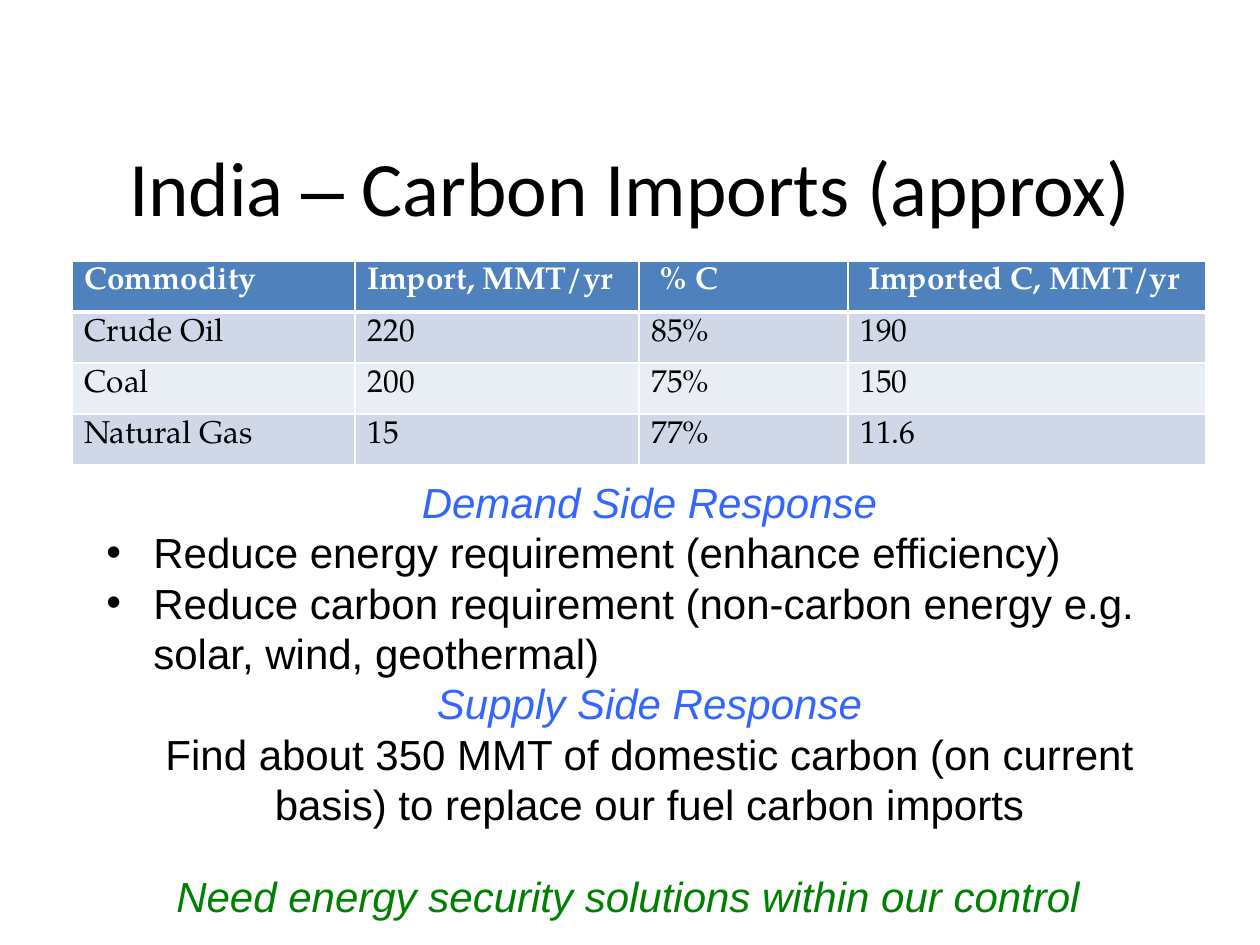
from lxml import etree
from pptx import Presentation
from pptx.dml.color import RGBColor
from pptx.enum.text import MSO_ANCHOR, PP_ALIGN
from pptx.oxml.ns import qn
from pptx.util import Emu, Pt

CENTER, LEFT = PP_ALIGN.CENTER, PP_ALIGN.LEFT
TOP, MIDDLE = MSO_ANCHOR.TOP, MSO_ANCHOR.MIDDLE

BLACK = RGBColor(0x00, 0x00, 0x00)
WHITE = RGBColor(0xFF, 0xFF, 0xFF)
BLUE = RGBColor(0x33, 0x66, 0xFF)
GREEN = RGBColor(0x00, 0x80, 0x00)
HEADER_FILL = RGBColor(0x4F, 0x81, 0xBD)
BAND_FILLS = [RGBColor(0xE9, 0xED, 0xF4), RGBColor(0xD0, 0xD8, 0xE8)]

TITLE_RUNS = [("India ", "Calibri"), ("–", "Arial"), (" Carbon Imports (approx)", "Calibri")]
IMPORTS = [
    ("Commodity", "Import, MMT/yr", " % C", " Imported C, MMT/yr"),
    ("Crude Oil", "220", "85%", "190"),
    ("Coal", "200", "75%", "150"),
    ("Natural Gas", "15", "77%", "11.6"),
]
RESPONSES = [
    ("heading", "Demand Side Response"),
    ("bullet", "Reduce energy requirement (enhance efficiency)"),
    ("bullet", "Reduce carbon requirement (non-carbon energy e.g. solar, wind, geothermal)"),
    ("heading", "Supply Side Response"),
    ("plain", "Find about 350 MMT of domestic carbon (on current basis) "
              "to replace our fuel carbon imports"),
]
CONCLUSION = [("conclusion", "Need energy security solutions within our control")]
STYLES = {
    "heading": (CENTER, BLUE, True),
    "bullet": (LEFT, BLACK, False),
    "plain": (CENTER, BLACK, False),
    "conclusion": (CENTER, GREEN, True),
}

TITLE_BOX = (63, 107, 1134, 158)
RESPONSE_BOX = (94, 470, 1111, 369)
CONCLUSION_BOX = (0, 864, 1256, 63)
TABLE_LEFT, TABLE_TOP = 72, 261
COLUMN_WIDTHS = [283, 284, 209, 358]
ROW_HEIGHT = 51
BULLET_INDENT = 47


def px(value):
    return Emu(round(value * 914400 / 126))


def add_run(paragraph, text, font_name, size, color, bold=False, italic=False):
    run = paragraph.add_run()
    run.text = text
    run.font.name = font_name
    run.font.size = Pt(size)
    run.font.color.rgb = color
    run.font.bold = bold
    run.font.italic = italic


def add_text_frame(slide, box, anchor=TOP):
    frame = slide.shapes.add_textbox(*map(px, box)).text_frame
    frame.word_wrap = True
    frame.vertical_anchor = anchor
    return frame


def add_bullet(paragraph):
    properties = paragraph._p.get_or_add_pPr()
    properties.set("marL", str(px(BULLET_INDENT)))
    properties.set("indent", str(-px(BULLET_INDENT)))
    etree.SubElement(properties, qn("a:buFont"), typeface="Arial")
    etree.SubElement(properties, qn("a:buChar"), char="•")


def add_lines(slide, box, lines):
    frame = add_text_frame(slide, box)
    for index, (kind, text) in enumerate(lines):
        paragraph = frame.add_paragraph() if index else frame.paragraphs[0]
        alignment, color, italic = STYLES[kind]
        paragraph.alignment = alignment
        if kind == "bullet":
            add_bullet(paragraph)
        add_run(paragraph, text, "Arial", 24, color, italic=italic)


def add_borders(cell, top_width, bottom_width):
    properties = cell._tc.get_or_add_tcPr()
    for side, width in (("L", 1), ("R", 1), ("T", top_width), ("B", bottom_width)):
        line = etree.SubElement(properties, qn(f"a:ln{side}"), w=str(Pt(width)))
        fill = etree.SubElement(line, qn("a:solidFill"))
        etree.SubElement(fill, qn("a:srgbClr"), val=str(WHITE))


def add_import_table(slide):
    table = slide.shapes.add_table(
        len(IMPORTS), len(COLUMN_WIDTHS), px(TABLE_LEFT), px(TABLE_TOP),
        px(sum(COLUMN_WIDTHS)), px(ROW_HEIGHT * len(IMPORTS))).table
    for column, width in zip(table.columns, COLUMN_WIDTHS):
        column.width = px(width)
    for row_index, values in enumerate(IMPORTS):
        table.rows[row_index].height = px(ROW_HEIGHT)
        header = row_index == 0
        for column_index, text in enumerate(values):
            cell = table.cell(row_index, column_index)
            add_borders(cell, 3 if row_index == 1 else 1, 3 if header else 1)
            cell.fill.solid()
            cell.fill.fore_color.rgb = HEADER_FILL if header else BAND_FILLS[row_index % 2]
            add_run(cell.text_frame.paragraphs[0], text, "TeX Gyre Pagella", 18,
                    WHITE if header else BLACK, bold=header)


def main():
    presentation = Presentation()
    presentation.slide_width, presentation.slide_height = px(1260), px(945)
    slide = presentation.slides.add_slide(presentation.slide_layouts[6])

    title = add_text_frame(slide, TITLE_BOX, MIDDLE).paragraphs[0]
    title.alignment = CENTER
    for text, font_name in TITLE_RUNS:
        add_run(title, text, font_name, 44, BLACK)

    add_import_table(slide)
    add_lines(slide, RESPONSE_BOX, RESPONSES)
    add_lines(slide, CONCLUSION_BOX, CONCLUSION)
    presentation.save("out.pptx")


if __name__ == "__main__":
    main()
